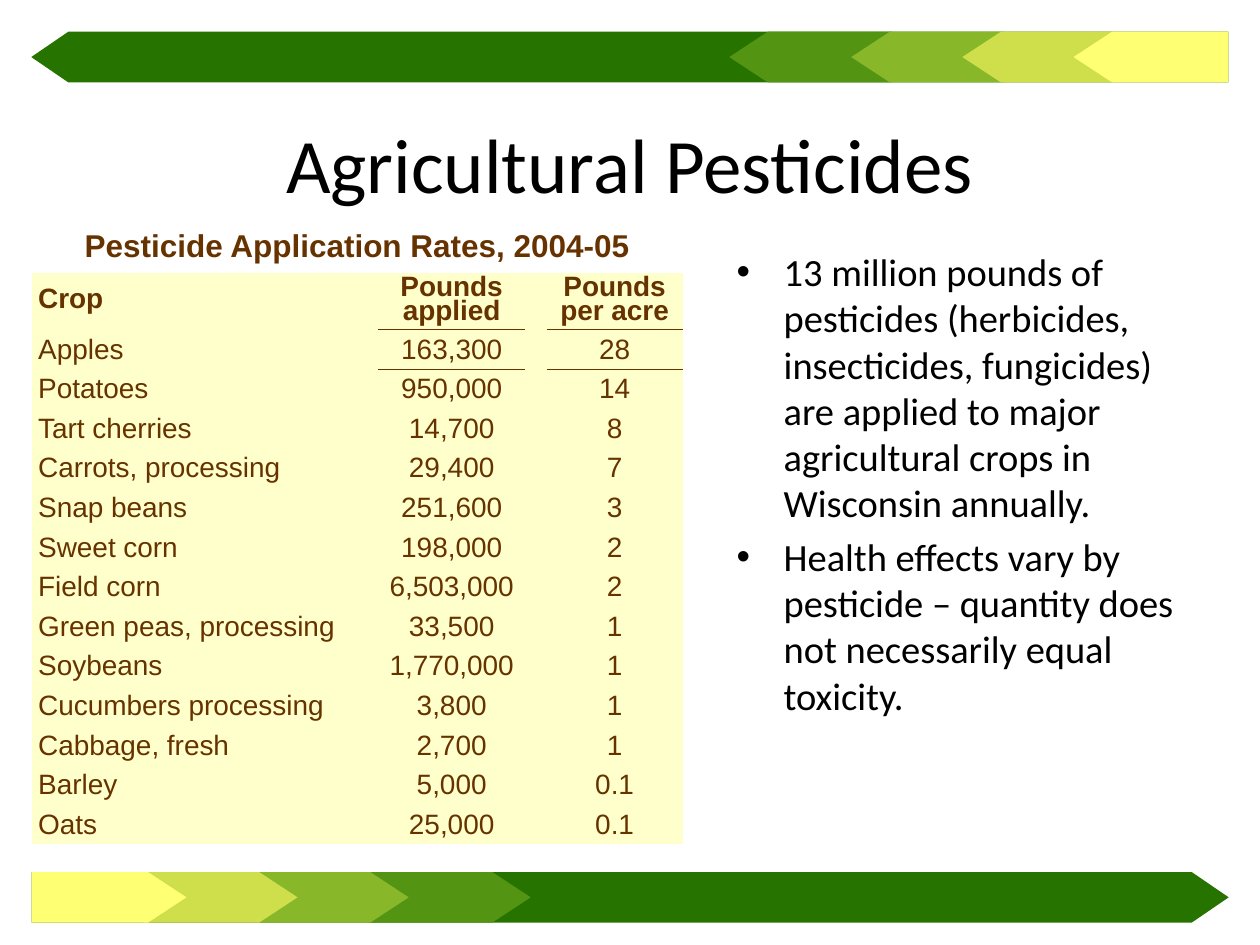
"""Build the Agricultural Pesticides slide with its table of application rates."""
import lxml.etree
import pptx
import pptx.dml.color
import pptx.enum.shapes
import pptx.enum.text
import pptx.oxml
import pptx.oxml.ns
import pptx.util

Cm, Pt = pptx.util.Cm, pptx.util.Pt
ALIGN = pptx.enum.text.PP_ALIGN
MIDDLE = pptx.enum.text.MSO_ANCHOR.MIDDLE
qn = pptx.oxml.ns.qn

TITLE = "Agricultural Pesticides"
CAPTION = "Pesticide Application Rates, 2004-05"
HEAD = ("Crop", "Pounds applied", "Pounds\nper acre")
CROPS = [
    ("Apples", "163,300", "28"),
    ("Potatoes", "950,000", "14"),
    ("Tart cherries", "14,700", "8"),
    ("Carrots, processing", "29,400", "7"),
    ("Snap beans", "251,600", "3"),
    ("Sweet corn", "198,000", "2"),
    ("Field corn", "6,503,000", "2"),
    ("Green peas, processing", "33,500", "1"),
    ("Soybeans", "1,770,000", "1"),
    ("Cucumbers processing", "3,800", "1"),
    ("Cabbage, fresh", "2,700", "1"),
    ("Barley", "5,000", "0.1"),
    ("Oats", "25,000", "0.1"),
]
POINTS = [
    "13 million pounds of pesticides (herbicides, insecticides, fungicides) "
    "are applied to major agricultural crops in Wisconsin annually.",
    "Health effects vary by pesticide – quantity does not necessarily equal toxicity.",
]
BARS = [
    (0.64, 24.13, 0.731, "267300"),
    (7.42, 3.28, 0.76, "539412"),
    (5.16, 3.08, 0.76, "88B82A"),
    (2.9, 3.1, 0.76, "CFDE4B"),
    (0.64, 3.12, 0.76, "FFFF73"),
]
WIDE, TALL = 25.4, 19.05
EDGE, THICK = 0.64, 1.02
COLS = (6.98, 2.97, 0.43, 2.74)
TOP, HIGH, LOW = 5.51, 1.09, 0.78
BROWN, CREAM, BLACK = "663300", "FFFFCC", "000000"
NOGRID = "{2D5ABB26-0587-4C30-8999-92F81FD0307C}"
HEADING = {"name": "Calibri", "size": Pt(44)}
BODY = {"name": "Calibri", "size": Pt(22)}
LABEL = {"name": "Arial", "size": Pt(18), "bold": True}
STRONG = {"name": "Arial", "size": Pt(16), "bold": True}
PLAIN = {"name": "Arial", "size": Pt(16), "bold": False}
PAD = {"margin_left": Cm(0.13), "margin_right": Cm(0.13),
       "margin_top": Cm(0.06), "margin_bottom": Cm(0.06), "vertical_anchor": MIDDLE}
GAP = {"margin_left": 0, "margin_right": 0, "margin_top": 0, "margin_bottom": 0}
INSET = {"margin_left": Cm(0.1), "margin_right": Cm(0.1),
         "margin_top": Cm(0.1), "margin_bottom": Cm(0.1), "word_wrap": True}


def put(item, form):
    for key, value in form.items():
        setattr(item, key, value)


def place(left, top, width, height):
    return dict(left=Cm(left), top=Cm(top), width=Cm(width), height=Cm(height))


def tint(code):
    return pptx.dml.color.RGBColor.from_string(code)


def ink(para, font, code):
    for run in para.runs:
        put(run.font, font)
        run.font.color.rgb = tint(code)


def bar(slide, left, top, width, bend, code, turn):
    kind = pptx.enum.shapes.MSO_SHAPE.PENTAGON
    shape = slide.shapes.add_shape(kind, **place(left, top, width, THICK))
    shape.adjustments[0] = bend
    shape.rotation = turn
    shape.shadow.inherit = False
    shape.fill.solid()
    shape.fill.fore_color.rgb = tint(code)
    shape.line.fill.background()


def rule(cell, side):
    edge = pptx.oxml.parse_xml(
        f'<a:{side} {pptx.oxml.ns.nsdecls("a")} w="9525"><a:solidFill>'
        f'<a:srgbClr val="{BROWN}"/></a:solidFill></a:{side}>')
    cell._tc.get_or_add_tcPr().insert(0, edge)


def fill(cell, text, col, row):
    put(cell, PAD if text else GAP)
    cell.fill.solid()
    cell.fill.fore_color.rgb = tint(CREAM)
    if not text:
        return
    cell.text = text
    for para in cell.text_frame.paragraphs:
        para.alignment = ALIGN.CENTER if col else ALIGN.LEFT
        if row == 0:
            para.line_spacing = 0.75
        ink(para, PLAIN if row else STRONG, BROWN)
    if col and row < 2:
        rule(cell, "lnT" if row else "lnB")


def grid(slide):
    rows = [HEAD] + CROPS
    spot = place(EDGE, TOP, sum(COLS), HIGH + LOW * len(CROPS))
    table = slide.shapes.add_table(len(rows), len(COLS), **spot).table
    put(table, {"first_row": False, "horz_banding": False})
    table._tbl.tblPr.find(qn("a:tableStyleId")).text = NOGRID
    for col, width in zip(table.columns, COLS):
        col.width = Cm(width)
    for row, (crop, total, rate) in enumerate(rows):
        table.rows[row].height = Cm(LOW if row else HIGH)
        for col, text in enumerate((crop, total, "", rate)):
            fill(table.cell(row, col), text, col, row)


def bullets(slide):
    frame = slide.shapes.add_textbox(**place(14.6, 4.88, 9.53, 13.13)).text_frame
    frame.word_wrap = True
    for num, text in enumerate(POINTS):
        para = frame.add_paragraph() if num else frame.paragraphs[0]
        props = para._p.get_or_add_pPr()
        put_in = {"marL": Cm(0.95), "indent": -Cm(0.95)}
        for key, value in put_in.items():
            props.set(key, str(int(value)))
        lxml.etree.SubElement(props, qn("a:buFont")).set("typeface", "Arial")
        lxml.etree.SubElement(props, qn("a:buChar")).set("char", "•")
        if num:
            para.space_before = Pt(4.4)
        para.add_run().text = text
        ink(para, BODY, BLACK)


def main():
    deck = pptx.Presentation()
    put(deck, {"slide_width": Cm(WIDE), "slide_height": Cm(TALL)})
    slide = deck.slides.add_slide(deck.slide_layouts[5])
    for left, width, bend, code in BARS:
        bar(slide, left, TALL - 1.47, width, bend, code, 0)
        bar(slide, WIDE - left - width, EDGE, width, bend, code, 180)

    title = slide.shapes.title
    put(title, place(1.27, 1.69, 22.86, 3.18))
    title.text_frame.text = TITLE
    title.text_frame.vertical_anchor = MIDDLE
    label = slide.shapes.add_textbox(**place(EDGE, 4.45, sum(COLS), 1.12))
    put(label.text_frame, INSET)
    label.text_frame.text = CAPTION
    for shape, font, code in ((title, HEADING, BLACK), (label, LABEL, BROWN)):
        para = shape.text_frame.paragraphs[0]
        para.alignment = ALIGN.CENTER
        ink(para, font, code)

    grid(slide)
    bullets(slide)
    deck.save("out.pptx")


if __name__ == "__main__":
    main()
